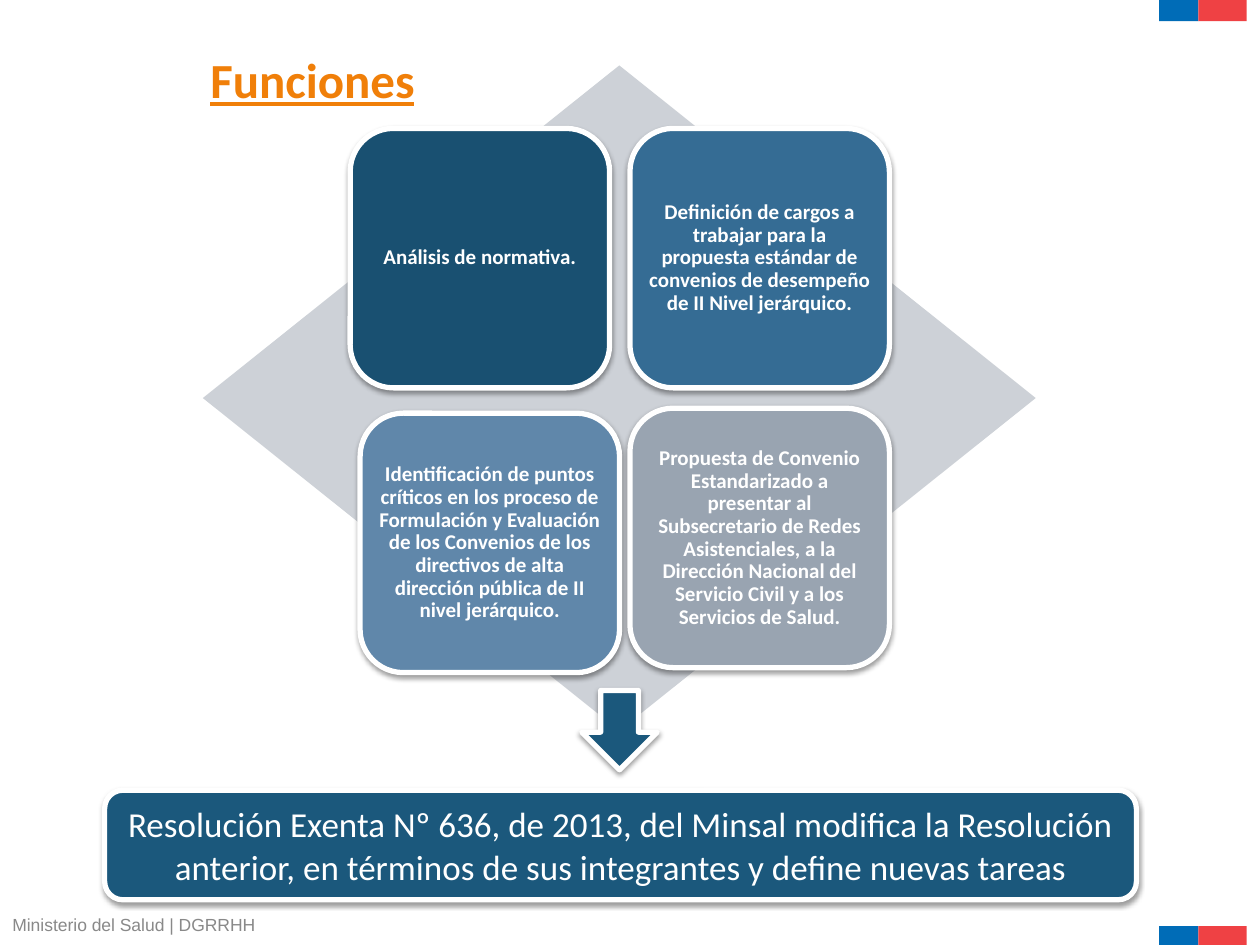
from lxml import etree
from pptx import Presentation
from pptx.dml.color import RGBColor
from pptx.enum.shapes import MSO_SHAPE
from pptx.enum.text import MSO_ANCHOR, PP_ALIGN
from pptx.oxml.ns import qn
from pptx.util import Cm, Pt

RECT, ROUND = MSO_SHAPE.RECTANGLE, MSO_SHAPE.ROUNDED_RECTANGLE
DIAMOND, ARROW = MSO_SHAPE.DIAMOND, MSO_SHAPE.DOWN_ARROW
MIDDLE, TOP = MSO_ANCHOR.MIDDLE, MSO_ANCHOR.TOP
LEFT, CENTER = PP_ALIGN.LEFT, PP_ALIGN.CENTER

# Content
TITLE = "Funciones"
FOOTER = "Ministerio del Salud | DGRRHH"
BANNER = ("Resolución Exenta Nº 636, de 2013, del Minsal modifica la Resolución "
          "anterior, en términos de sus integrantes y define nuevas tareas")
# text, fill, left, top (cm)
TASKS = [
    ("Análisis de normativa.", "195071", 7.06, 2.59),
    ("Definición de cargos a trabajar para la propuesta estándar de convenios "
     "de desempeño de II Nivel jerárquico.", "356C94", 12.7, 2.59),
    ("Identificación de puntos críticos en los proceso de Formulación y "
     "Evaluación de los Convenios de los directivos de alta dirección pública "
     "de II nivel jerárquico.", "6087AA", 7.26, 8.33),
    ("Propuesta de Convenio Estandarizado a presentar al Subsecretario de Redes "
     "Asistenciales, a la Dirección Nacional del Servicio Civil y a los "
     "Servicios de Salud.", "99A4B1", 12.7, 8.23),
]

THEME = {
    "blue": "006CB7", "red": "EF4144", "diamond": "CDD1D7",
    "accent": "1B587C", "border": "FFFFFF", "border_width": 3,
    "title": {"size": Pt(28), "name": "Calibri", "bold": True, "underline": True},
    "title_color": "F07F09",
    "task": {"size": Pt(12), "name": "Calibri", "bold": True},
    "banner": {"size": Pt(20), "name": "Calibri"},
    "light": "FFFFFF",
    "footer": {"size": Pt(10), "name": "Arial"},
    "footer_color": "898989",
}
TILE = 5.23
FLAG_LEFT, FLAG_HEIGHT = 23.37, 0.43
FLAG_PARTS = [("blue", 0.79), ("red", 0.97)]
FLAG_TOPS = [0, 18.67]


def add_shadow(sp):
    effects = sp._element.spPr.find(qn("a:effectLst"))
    shadow = etree.SubElement(effects, qn("a:outerShdw"), blurRad=str(Pt(3.1)),
                              dist=str(Pt(1.6)), dir="5400000", rotWithShape="0")
    color = etree.SubElement(shadow, qn("a:srgbClr"), val="000000")
    etree.SubElement(color, qn("a:alpha"), val="38000")


def add_block(s, kind, box, fill, raised=False):
    sp = s.shapes.add_shape(kind, *map(Cm, box))
    sp.shadow.inherit = False
    sp.fill.solid()
    sp.fill.fore_color.rgb = RGBColor.from_string(fill)
    if raised:
        sp.line.color.rgb = RGBColor.from_string(THEME["border"])
        sp.line.width = Pt(THEME["border_width"])
        add_shadow(sp)
    else:
        sp.line.fill.background()
    return sp


def write(sp, text, font, color, align=CENTER, anchor=MIDDLE, spacing=1.0,
          margin=None, wrap=True):
    tf = sp.text_frame
    tf.word_wrap = wrap
    tf.vertical_anchor = anchor
    if margin is not None:
        for side in ("left", "top", "right", "bottom"):
            setattr(tf, f"margin_{side}", Cm(margin))
    p = tf.paragraphs[0]
    p.alignment, p.line_spacing = align, spacing
    r = p.add_run()
    r.text = text
    for name, value in font.items():
        setattr(r.font, name, value)
    r.font.color.rgb = RGBColor.from_string(color)


def main():
    prs = Presentation()
    prs.slide_width, prs.slide_height = Cm(25.4), Cm(19.05)
    s = prs.slides.add_slide(prs.slide_layouts[5])

    # Corner flags
    for top in FLAG_TOPS:
        left = FLAG_LEFT
        for color, width in FLAG_PARTS:
            add_block(s, RECT, (left, top, width, FLAG_HEIGHT), THEME[color])
            left += width

    # Footer
    footer = s.shapes.add_textbox(Cm(0), Cm(18.31), Cm(5.41), Cm(0.69))
    write(footer, FOOTER, THEME["footer"], THEME["footer_color"],
          align=LEFT, anchor=TOP, wrap=False)

    # Diamond with four tasks
    add_block(s, DIAMOND, (4.09, 1.32, 16.79, 13.41), THEME["diamond"])
    for text, fill, left, top in TASKS:
        tile = add_block(s, ROUND, (left, top, TILE, TILE), fill, raised=True)
        write(tile, text, THEME["task"], THEME["light"], spacing=0.9, margin=0.13)

    # Resolution banner and the arrow to it
    banner = add_block(s, ROUND, (2.11, 15.93, 20.8, 2.21), THEME["accent"], raised=True)
    write(banner, BANNER, THEME["banner"], THEME["light"])
    add_block(s, ARROW, (11.73, 13.92, 1.52, 1.6), THEME["accent"], raised=True)

    # Title
    title = s.shapes.title
    title.left, title.top, title.width, title.height = map(Cm, (3.94, 0.05, 4.85, 3.25))
    write(title, TITLE, THEME["title"], THEME["title_color"],
          align=LEFT, spacing=0.9, margin=0.3)

    prs.save("out.pptx")


if __name__ == "__main__":
    main()
